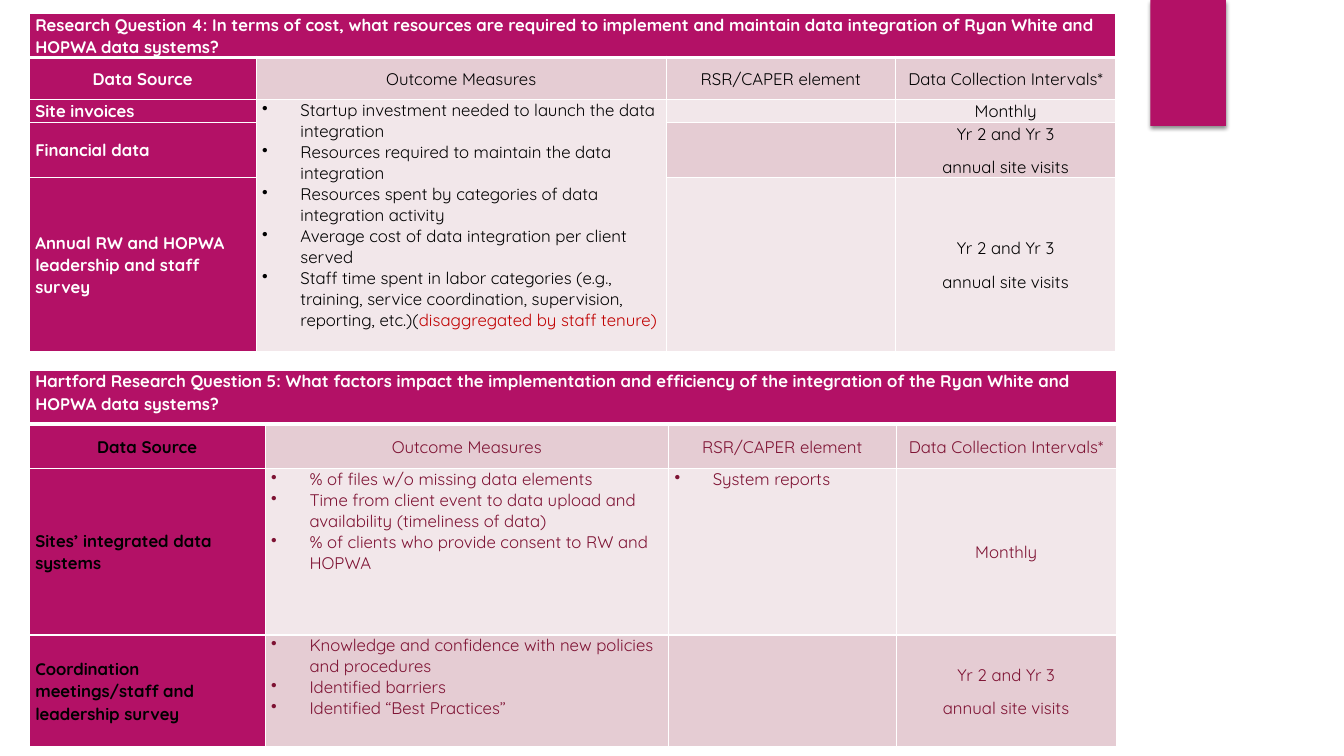
from dataclasses import dataclass

from lxml import etree
from pptx import Presentation
from pptx.dml.color import RGBColor
from pptx.enum import shapes, text
from pptx.oxml import ns
from pptx.util import Inches, Pt


@dataclass(frozen=True)
class Theme:
    font: str = "Quicksand"
    size: float = 12
    accent: str = "B31166"
    bands: tuple = ("F2E7EA", "E5CCD3")
    white: str = "FFFFFF"
    black: str = "000000"
    wine: str = "7E1233"
    red: str = "C00000"


THEME = Theme()
HEADINGS = ["Data Source", "Outcome Measures", "RSR/CAPER element", "Data Collection Intervals*"]
SITE_VISITS = ["Yr 2 and Yr 3", "annual site visits"]
OUTCOMES, ELEMENT, INTERVAL = 1, 2, 3

QUESTIONS = [
    {
        "title": "Hartford Research Question 5: What factors impact the implementation and efficiency "
                 "of the integration of the Ryan White and HOPWA data systems?",
        "place": (0.29, 3.67),
        "columns": [2.34, 4, 2.26, 2.18],
        "heights": [0.54, 0.44, 1.65, 1.11],
        "label_color": THEME.black,
        "body_color": THEME.wine,
        "merge_outcomes": False,
        "rows": [
            ("Sites’ integrated data systems",
             ["% of files w/o missing data elements",
              "Time from client event to data upload and availability (timeliness of data)",
              "% of clients who provide consent to RW and HOPWA"],
             ["System reports"], ["Monthly"]),
            ("Coordination meetings/staff and leadership survey",
             ["Knowledge and confidence with new policies and procedures",
              "Identified barriers", "Identified “Best Practices”"],
             [], SITE_VISITS),
        ],
    },
    {
        "title": "Research Question 4: In terms of cost, what resources are required to implement "
                 "and maintain data integration of Ryan White and HOPWA data systems?",
        "place": (0.29, 0.13),
        "columns": [2.25, 4.07, 2.27, 2.19],
        "heights": [0.42, 0.42, 0.21, 0.53, 1.72],
        "label_color": THEME.white,
        "body_color": THEME.black,
        "merge_outcomes": True,
        "rows": [
            ("Site invoices",
             ["Startup investment needed to launch the data integration",
              "Resources required to maintain the data integration",
              "Resources spent by categories of data integration activity",
              "Average cost of data integration per client served",
              [("Staff time spent in labor categories (e.g., training, service coordination, "
                "supervision, reporting, etc.)(", THEME.black),
               ("disaggregated by staff tenure)", THEME.red)]],
             [], ["Monthly"]),
            ("Financial data", [], [], SITE_VISITS),
            ("Annual RW and HOPWA leadership and staff survey", [], [], SITE_VISITS),
        ],
    },
]


def write(cell, lines, color=THEME.black, bold=False, centered=False, bullets=False, middle=True):
    cell.margin_left = cell.margin_right = Inches(0.06)
    cell.margin_top = cell.margin_bottom = 0
    cell.vertical_anchor = text.MSO_ANCHOR.MIDDLE if middle else text.MSO_ANCHOR.TOP
    frame = cell.text_frame
    for index, line in enumerate(lines):
        para = frame.add_paragraph() if index else frame.paragraphs[0]
        if bullets:
            properties = para._p.get_or_add_pPr()
            properties.set("marL", str(Inches(0.38)))
            properties.set("indent", str(-Inches(0.38)))
            etree.SubElement(properties, ns.qn("a:buChar")).set("char", "•")
        else:
            para.line_spacing = 1.06
            para.space_after = Pt(8)
        para.alignment = text.PP_ALIGN.CENTER if centered else text.PP_ALIGN.LEFT
        for words, ink in [(line, color)] if isinstance(line, str) else line:
            span = para.add_run()
            span.text = words
            span.font.name = THEME.font
            span.font.size = Pt(THEME.size)
            span.font.bold = bold
            span.font.color.rgb = RGBColor.from_string(ink)
    if not lines:
        ending = etree.SubElement(frame.paragraphs[0]._p, ns.qn("a:endParaRPr"))
        ending.set("sz", str(THEME.size * 100))


def paint(cell, fill, bottom=1):
    properties = cell._tc.get_or_add_tcPr()
    for side, width in (("L", 1), ("R", 1), ("T", 1), ("B", bottom)):
        line = etree.SubElement(properties, ns.qn(f"a:ln{side}"), w=str(Pt(width)))
        solid = etree.SubElement(line, ns.qn("a:solidFill"))
        etree.SubElement(solid, ns.qn("a:srgbClr"), val=THEME.white)
    cell.fill.solid()
    cell.fill.fore_color.rgb = RGBColor.from_string(fill)


def add_question(page, question):
    columns, heights = question["columns"], question["heights"]
    left, top = question["place"]
    table = page.shapes.add_table(
        len(heights), len(columns), Inches(left), Inches(top),
        Inches(sum(columns)), Inches(sum(heights))).table
    table.first_row = table.horz_banding = False
    for column, width in zip(table.columns, columns):
        column.width = Inches(width)
    for row, height in zip(table.rows, heights):
        row.height = Inches(height)

    for number in range(len(columns)):
        title = [question["title"]] if number == 0 else []
        write(table.cell(0, number), title, color=THEME.white, bold=True, middle=False)
        paint(table.cell(0, number), THEME.accent, bottom=3)
    table.cell(0, 0).merge(table.cell(0, len(columns) - 1))

    body = [[[heading] for heading in HEADINGS]]
    body += [[[label], *rest] for label, *rest in question["rows"]]
    for row, entries in enumerate(body, 1):
        for number, lines in enumerate(entries):
            cell = table.cell(row, number)
            is_label = number == 0
            listed = row > 1 and number in (OUTCOMES, ELEMENT)
            write(cell, lines,
                  color=question["label_color" if is_label else "body_color"],
                  bold=is_label, centered=row == 1 or number == INTERVAL,
                  bullets=listed, middle=not listed)
            paint(cell, THEME.accent if is_label else THEME.bands[row % 2])
    if question["merge_outcomes"]:
        table.cell(2, OUTCOMES).merge(table.cell(len(heights) - 1, OUTCOMES))


def add_ribbon(page):
    ribbon = page.shapes.add_shape(
        shapes.MSO_SHAPE.RECTANGLE, Inches(11.41), 0, Inches(0.75), Inches(1.25))
    ribbon.fill.solid()
    ribbon.fill.fore_color.rgb = RGBColor.from_string(THEME.accent)
    ribbon.line.fill.background()
    ribbon.shadow.inherit = False
    effects = ribbon._element.spPr.find(ns.qn("a:effectLst"))
    shadow = etree.SubElement(effects, ns.qn("a:outerShdw"), blurRad=str(Pt(3)),
                              dist=str(Pt(2)), dir="5400000", rotWithShape="0")
    tint = etree.SubElement(shadow, ns.qn("a:srgbClr"), val=THEME.black)
    etree.SubElement(tint, ns.qn("a:alpha"), val="45000")


def main():
    deck = Presentation()
    deck.slide_width, deck.slide_height = Inches(13.33), Inches(7.5)
    page = deck.slides.add_slide(deck.slide_layouts[6])
    add_ribbon(page)
    for question in QUESTIONS:
        add_question(page, question)
    deck.save("out.pptx")


if __name__ == "__main__":
    main()
